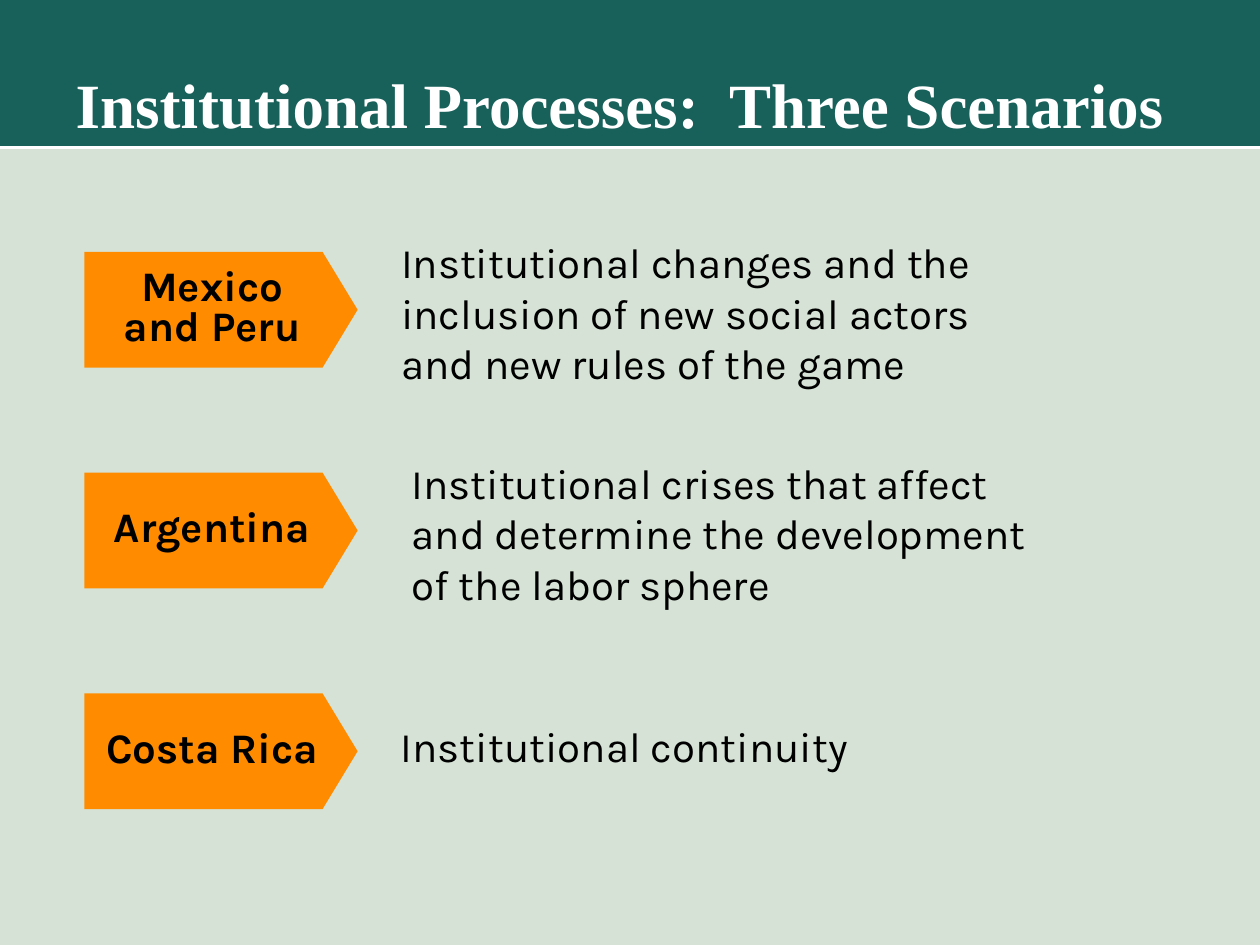
import pptx
import pptx.dml.color
import pptx.enum.shapes
import pptx.enum.text
import pptx.oxml
import pptx.oxml.ns
import pptx.util
from dataclasses import dataclass
from pptx.util import Cm

ALIGN = pptx.enum.text.PP_ALIGN
ANCHOR = pptx.enum.text.MSO_ANCHOR
SHAPE = pptx.enum.shapes.MSO_SHAPE


@dataclass(frozen=True)
class Theme:
    background: str = "D5E2D5"
    band: str = "18605A"
    rule: str = "FFFFFF"
    tag: str = "FF8C00"
    title_text: str = "FFFFFF"
    title_shadow: str = "333340"
    text: str = "000000"
    title_font: str = "Times New Roman"
    body_font: str = "Karla"
    title_size: float = 36
    body_size: float = 24
    rule_width: float = 1.5


@dataclass(frozen=True)
class Frame:
    left: float
    top: float
    width: float
    height: float


@dataclass(frozen=True)
class Scenario:
    country: str
    process: str
    frame: Frame


THEME = Theme()
PAGE_WIDTH, PAGE_HEIGHT = 25.4, 19.05
BAND_HEIGHT = 2.97
TITLE_FRAME = Frame(1.27, -0.2, 23.06, 3.17)
TAG_LEFT, TAG_TOP, TAG_WIDTH, TAG_HEIGHT = 1.7, 5.08, 5.51, 2.33
TAG_PITCH = 4.45
TAG_POINT = 0.303

SCENARIOS = [
    Scenario("Mexico\nand Peru",
             "Institutional changes and the inclusion of new social actors "
             "and new rules of the game", Frame(7.83, 4.65, 12.07, 3.38)),
    Scenario("Argentina",
             "Institutional crises that affect and determine the development "
             "of the labor sphere", Frame(8.05, 9.1, 12.9, 4.24)),
    Scenario("Costa Rica", "Institutional continuity",
             Frame(7.83, 14.4, 16.51, 1.7)),
]


def color(value: str) -> pptx.dml.color.RGBColor:
    return pptx.dml.color.RGBColor.from_string(value)


def lengths(frame: Frame) -> list:
    return [Cm(n) for n in (frame.left, frame.top, frame.width, frame.height)]


def place(box, frame: Frame) -> None:
    for name, value in zip(("left", "top", "width", "height"), lengths(frame)):
        setattr(box, name, value)


def write(box, text: str, font: dict, text_color: str,
          frame_format: dict, para_format: dict) -> None:
    """Fill a box with one formatted paragraph."""
    text_frame = box.text_frame
    para = text_frame.paragraphs[0]
    para.text = text
    targets = [(text_frame, frame_format), (para, para_format)]
    targets += [(span.font, font) for span in para.runs]
    for target, values in targets:
        for name, value in values.items():
            setattr(target, name, value)
    for span in para.runs:
        span.font.color.rgb = color(text_color)


def body_font(bold: bool) -> dict:
    return {"name": THEME.body_font, "size": pptx.util.Pt(THEME.body_size),
            "bold": bold}


def draw_shape(page, kind, frame: Frame, fill: str):
    box = page.shapes.add_shape(kind, *lengths(frame))
    box.shadow.inherit = False
    box.fill.solid()
    box.fill.fore_color.rgb = color(fill)
    box.line.fill.background()
    return box


def draw_header(page) -> None:
    title = page.shapes.title
    # Band and rule lie behind the title
    band = draw_shape(page, SHAPE.RECTANGLE,
                      Frame(0, 0, PAGE_WIDTH, BAND_HEIGHT), THEME.band)
    rule = page.shapes.add_connector(
        pptx.enum.shapes.MSO_CONNECTOR.STRAIGHT,
        Cm(0), Cm(BAND_HEIGHT), Cm(PAGE_WIDTH), Cm(BAND_HEIGHT))
    rule.line.color.rgb = color(THEME.rule)
    rule.line.width = pptx.util.Pt(THEME.rule_width)
    pptx.oxml.ns.qn("a:effectLst")
    rule.element.spPr.append(pptx.oxml.parse_xml(
        f'<a:effectLst {pptx.oxml.ns.nsdecls("a")}/>'))
    for item in (band, rule):
        title.element.addprevious(item.element)

    # Title with a text shadow
    place(title, TITLE_FRAME)
    write(title, "Institutional Processes:  Three Scenarios",
          {"name": THEME.title_font, "size": pptx.util.Pt(THEME.title_size),
           "bold": True}, THEME.title_text,
          {"vertical_anchor": ANCHOR.BOTTOM, "word_wrap": True,
           "auto_size": pptx.enum.text.MSO_AUTO_SIZE.NONE},
          {"alignment": ALIGN.LEFT})
    shadow = pptx.oxml.parse_xml(
        f'<a:effectLst {pptx.oxml.ns.nsdecls("a")}>'
        '<a:outerShdw dist="35921" dir="2700000">'
        f'<a:srgbClr val="{THEME.title_shadow}"/></a:outerShdw></a:effectLst>')
    properties = title.text_frame.paragraphs[0].runs[0].font.fill
    run_element = title.text_frame.paragraphs[0].runs[0]
    fill_element = run_element.font.color and run_element._r.rPr.find(
        pptx.oxml.ns.qn("a:solidFill"))
    fill_element.addnext(shadow)


def draw_tag(page, country: str, row: int) -> None:
    tag = draw_shape(page, SHAPE.PENTAGON,
                     Frame(TAG_LEFT, TAG_TOP + row * TAG_PITCH,
                           TAG_WIDTH, TAG_HEIGHT), THEME.tag)
    tag.adjustments[0] = TAG_POINT
    write(tag, country, body_font(True), THEME.text,
          {"vertical_anchor": ANCHOR.MIDDLE, "word_wrap": False},
          {"alignment": ALIGN.CENTER, "line_spacing": 0.8})


def write_process(box, process: str) -> None:
    write(box, process, body_font(False), THEME.text,
          {"vertical_anchor": ANCHOR.TOP, "word_wrap": True,
           "auto_size": pptx.enum.text.MSO_AUTO_SIZE.NONE},
          {"alignment": ALIGN.LEFT,
           "space_before": pptx.util.Pt(0.2 * THEME.body_size)})


def main() -> None:
    deck = pptx.Presentation()
    deck.slide_width, deck.slide_height = Cm(PAGE_WIDTH), Cm(PAGE_HEIGHT)
    page = deck.slides.add_slide(deck.slide_layouts[1])
    page.background.fill.solid()
    page.background.fill.fore_color.rgb = color(THEME.background)
    draw_header(page)

    # The first process uses the body placeholder, without a bullet
    body = page.placeholders[1]
    for row, scenario in enumerate(SCENARIOS):
        draw_tag(page, scenario.country, row)
        box = body if row == 0 else page.shapes.add_textbox(
            *lengths(scenario.frame))
        place(box, scenario.frame)
        write_process(box, scenario.process)
    bullet_format = body.text_frame.paragraphs[0]._p.get_or_add_pPr()
    for name in ("marL", "indent"):
        bullet_format.set(name, "0")
    bullet_format.append(pptx.oxml.parse_xml(
        f'<a:buNone {pptx.oxml.ns.nsdecls("a")}/>'))

    deck.save("out.pptx")


if __name__ == "__main__":
    main()
